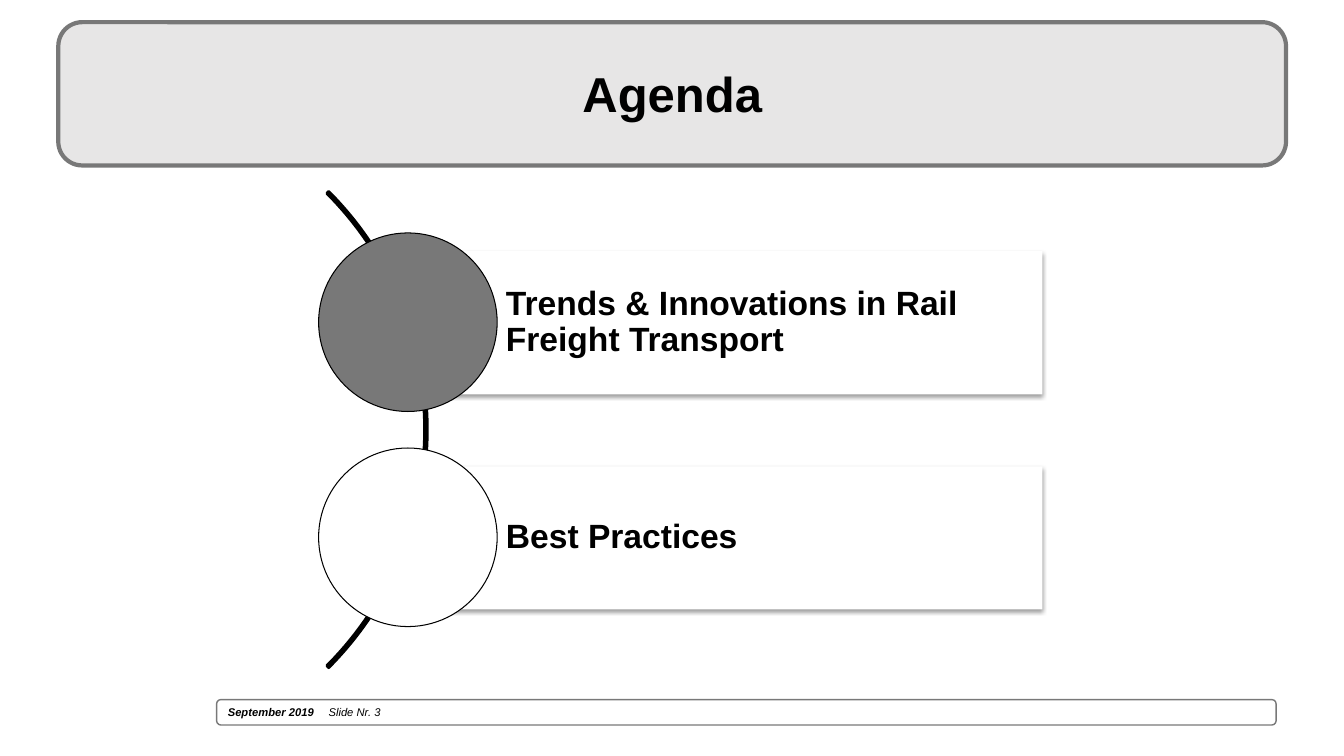
import pptx
import pptx.dml.color
import pptx.enum.shapes
import pptx.enum.text
import pptx.oxml
import pptx.oxml.ns
import pptx.util

Cm = pptx.util.Cm
Pt = pptx.util.Pt
MSO_SHAPE = pptx.enum.shapes.MSO_SHAPE
ANCHOR_MIDDLE = pptx.enum.text.MSO_ANCHOR.MIDDLE

THEME = {
    "font": "Arial",
    "black": "000000", "white": "FFFFFF", "gray": "787878", "light": "E7E6E6",
    "title": 35, "item": 24, "footer": 8,
}
NAMESPACE = pptx.oxml.ns.nsdecls("a")


def add_panel(kind, left, top, width, height, fill, line_color=None, line_width=0):
    shape = slide.shapes.add_shape(kind, Cm(left), Cm(top), Cm(width), Cm(height))
    shape.shadow.inherit = False
    shape.fill.solid()
    shape.fill.fore_color.rgb = pptx.dml.color.RGBColor.from_string(THEME[fill])
    if line_color:
        shape.line.color.rgb = pptx.dml.color.RGBColor.from_string(THEME[line_color])
        shape.line.width = Pt(line_width)
    else:
        shape.line.fill.background()
    return shape


def add_text(paragraph, text, size, **styles):
    run = paragraph.add_run()
    run.text = text
    run.font.color.rgb = pptx.dml.color.RGBColor.from_string(THEME["black"])
    formats = {"name": THEME["font"], "size": Pt(THEME[size]), "bold": True, **styles}
    for name, value in formats.items():
        setattr(run.font, name, value)


presentation = pptx.Presentation()
presentation.slide_width = Cm(33.87)
presentation.slide_height = Cm(19.05)
slide = presentation.slides.add_slide(presentation.slide_layouts[5])

# Footer
footer = add_panel(MSO_SHAPE.ROUNDED_RECTANGLE, 5.46, 17.63, 26.7, 0.64, "white", "gray", 1)
footer.text_frame.vertical_anchor = ANCHOR_MIDDLE
paragraph = footer.text_frame.paragraphs[0]
paragraph.alignment = pptx.enum.text.PP_ALIGN.LEFT
paragraph._p.get_or_add_pPr().append(pptx.oxml.parse_xml(
    f'<a:tabLst {NAMESPACE}><a:tab pos="{Cm(2.54)}" algn="l"/></a:tabLst>'))
add_text(paragraph, "September 2019\t", "footer", italic=True)
add_text(paragraph, "Slide Nr. 3", "footer", bold=False, italic=True)

# Title on its bar
add_panel(MSO_SHAPE.ROUNDED_RECTANGLE, 1.47, 0.56, 30.94, 3.61, "light", "gray", 3)
title = slide.shapes.title
title_box = {"left": Cm(2.01), "top": Cm(0.76), "width": Cm(29.87), "height": Cm(3.18)}
for name, value in title_box.items():
    setattr(title, name, value)
title.text_frame.vertical_anchor = ANCHOR_MIDDLE
paragraph = title.text_frame.paragraphs[0]
paragraph.alignment = pptx.enum.text.PP_ALIGN.CENTER
add_text(paragraph, "Agenda", "title")
slide.shapes._spTree.append(title._element)  # bring in front of the bar

# Arc behind the agenda items
arc = add_panel(MSO_SHAPE.BLOCK_ARC, -6.2, 2.34, 16.97, 16.97, "black", "black", 2)
for index, value in enumerate((189, 27, 0.004)):
    arc.adjustments[index] = value

# Agenda items
ITEM_PITCH = 5.42
items = [
    ("Trends & Innovations in Rail Freight Transport", "gray"),
    ("Best Practices", "white"),
]
for index, (text, circle_fill) in enumerate(items):
    offset = index * ITEM_PITCH
    card = add_panel(MSO_SHAPE.RECTANGLE, 9.91, 6.33 + offset, 16.36, 3.61, "white")
    card._element.spPr.find(pptx.oxml.ns.qn("a:effectLst")).append(pptx.oxml.parse_xml(
        f'<a:outerShdw {NAMESPACE} blurRad="{Pt(3.1)}" dist="{Pt(1.6)}" dir="5400000" '
        f'rotWithShape="0"><a:srgbClr val="{THEME["black"]}"><a:alpha val="38000"/>'
        '</a:srgbClr></a:outerShdw>'))
    frame_format = {
        "margin_left": Cm(2.84), "margin_top": Cm(0.18), "margin_right": Cm(0.18),
        "margin_bottom": Cm(0.18), "word_wrap": True, "vertical_anchor": ANCHOR_MIDDLE,
    }
    for name, value in frame_format.items():
        setattr(card.text_frame, name, value)
    paragraph = card.text_frame.paragraphs[0]
    paragraph.alignment = pptx.enum.text.PP_ALIGN.LEFT
    paragraph.line_spacing = 0.9
    add_text(paragraph, text, "item")
    add_panel(MSO_SHAPE.OVAL, 8.03, 5.87 + offset, 4.5, 4.5, circle_fill, "black", 0.75)

presentation.save("out.pptx")
